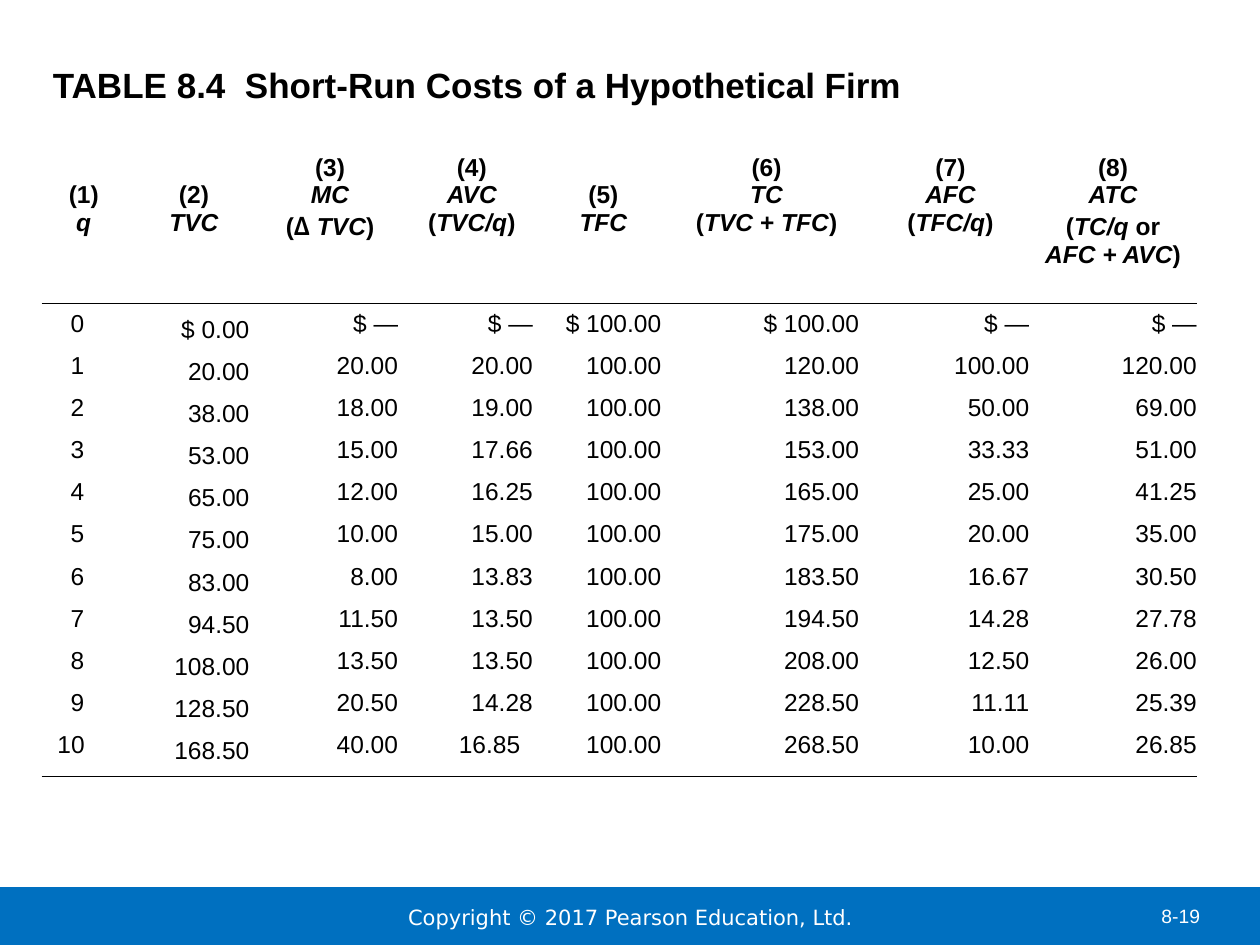
from lxml import etree
from pptx import Presentation, util as u
from pptx.dml.color import RGBColor
from pptx.enum import shapes, text
from pptx.oxml.ns import qn

BLACK = RGBColor(0, 0, 0)
WHITE = RGBColor(255, 255, 255)
BLUE = RGBColor(0x00, 0x70, 0xC0)
PLAIN_STYLE = "{2D5ABB26-0587-4C30-8999-92F81FD0307C}"

# Content: asterisks switch italics on and off within a line
TITLE = "TABLE 8.4  Short-Run Costs of a Hypothetical Firm"
COPYRIGHT = "Copyright © 2017 Pearson Education, Ltd."
PAGE = "8-19"
HEADERS = [
    "(1)\n*q*", "(2)\n*TVC*", "(3)\n*MC*\n(**Δ** *TVC*)",
    "(4)\n*AVC*\n(*TVC/q*)", "(5)\n*TFC*", "(6)\n*TC*\n(*TVC* + *TFC*)",
    "(7)\n*AFC*\n(*TFC/q*)", ["(8)\n*ATC*", "(*TC/q* or *AFC + AVC*)"],
]
ROWS = [
    ("0", "$ 0.00", "$ —", "$ —", "$ 100.00", "$ 100.00", "$ —", "$ —"),
    ("1", "20.00", "20.00", "20.00", "100.00", "120.00", "100.00", "120.00"),
    ("2", "38.00", "18.00", "19.00", "100.00", "138.00", "50.00", "69.00"),
    ("3", "53.00", "15.00", "17.66", "100.00", "153.00", "33.33", "51.00"),
    ("4", "65.00", "12.00", "16.25", "100.00", "165.00", "25.00", "41.25"),
    ("5", "75.00", "10.00", "15.00", "100.00", "175.00", "20.00", "35.00"),
    ("6", "83.00", "8.00", "13.83", "100.00", "183.50", "16.67", "30.50"),
    ("7", "94.50", "11.50", "13.50", "100.00", "194.50", "14.28", "27.78"),
    ("8", "108.00", "13.50", "13.50", "100.00", "208.00", "12.50", "26.00"),
    ("9", "128.50", "20.50", "14.28", "100.00", "228.50", "11.11", "25.39"),
    ("10", "168.50", "40.00", "16.85", "100.00", "268.50", "10.00", "26.85"),
]
COL_WIDTHS = [0.67, 1.08, 1.08, 1.17, 0.92, 1.67, 1.25, 1.33]
ROW_HEIGHTS = [1.24] + [0.32] * 5 + [0.34] + [0.32] * 4 + [0.41]
RIGHT_INSETS = [0.1, 0.1, 0, 0.1, 0, 0.1, 0, 0]


def write(tf, paragraphs, size=14, font="Arial", color=BLACK, bold=False,
          align=text.PP_ALIGN.LEFT, gap=2.8):
    if isinstance(paragraphs, str):
        paragraphs = [paragraphs]
    for i, paragraph in enumerate(paragraphs):
        p = tf.add_paragraph() if i else tf.paragraphs[0]
        p.alignment = align
        if i:
            p.space_before = u.Pt(gap)
        for j, line in enumerate(paragraph.split("\n")):
            if j:
                p.add_line_break()
                etree.SubElement(p._p[-1], qn("a:rPr"), sz=str(size * 100))
            for k, part in enumerate(line.split("*")):
                if not part:
                    continue
                r = p.add_run()
                r.text = part
                delta = part == "Δ"
                r.font.size = u.Pt(16 if delta else size)
                r.font.name = "Calibri" if delta else font
                r.font.color.rgb = color
                r.font.bold = bold
                r.font.italic = k % 2 == 1


def set_insets(box, left, top, right, bottom):
    box.margin_left, box.margin_top = u.Inches(left), u.Inches(top)
    box.margin_right, box.margin_bottom = u.Inches(right), u.Inches(bottom)


def add_box(s, *place):
    tf = s.shapes.add_textbox(*map(u.Inches, place)).text_frame
    tf.word_wrap = True
    return tf


def add_band(s, *place):
    sp = s.shapes.add_shape(shapes.MSO_SHAPE.RECTANGLE, *map(u.Inches, place))
    sp.shadow.inherit = False
    sp.fill.solid()
    sp.fill.fore_color.rgb = BLUE
    sp.line.fill.background()
    return sp.text_frame


def rule_below(cell):
    ln = etree.Element(qn("a:lnB"), w=str(u.Pt(1)))
    fill = etree.SubElement(ln, qn("a:solidFill"))
    etree.SubElement(fill, qn("a:srgbClr"), val=str(BLACK))
    cell._tc.get_or_add_tcPr().insert(0, ln)


def add_cost_table(s):
    frame = s.shapes.add_table(
        len(ROW_HEIGHTS), len(COL_WIDTHS), u.Inches(0.33), u.Inches(1.17),
        u.Inches(sum(COL_WIDTHS)), u.Inches(sum(ROW_HEIGHTS)))
    table = frame.table
    table.first_row = table.horz_banding = False
    table._tbl.tblPr.find(qn("a:tableStyleId")).text = PLAIN_STYLE
    for col, width in zip(table.columns, COL_WIDTHS):
        col.width = u.Inches(width)
    for row, height in zip(table.rows, ROW_HEIGHTS):
        row.height = u.Inches(height)

    last = len(ROWS)
    for i, values in enumerate([HEADERS] + ROWS):
        for j, value in enumerate(values):
            cell = table.cell(i, j)
            cell.fill.background()
            centred = i == 0 or j == 0
            if i == 0:
                # Two-line headings start one line lower
                short = isinstance(value, str) and value.count("\n") == 1
                set_insets(cell, 0.1, 0.27 if short else 0.05, 0.1, 0.05)
            else:
                right = 0.2 if i == last and j in (0, 3) else RIGHT_INSETS[j]
                top, bottom = (0.1, 0) if j == 1 else (0.05, 0.05)
                set_insets(cell, 0, top, right, bottom)
            write(cell.text_frame, value, bold=i == 0,
                  align=text.PP_ALIGN.CENTER if centred else text.PP_ALIGN.RIGHT)
            if i in (0, last):
                rule_below(cell)


def main():
    prs = Presentation()
    prs.slide_width, prs.slide_height = u.Inches(10), u.Inches(7.5)
    s = prs.slides.add_slide(prs.slide_layouts[6])

    # Footer
    add_band(s, 0, 7.04, 10, 0.46)
    write(add_box(s, 9.12, 7.13, 0.76, 0.29), PAGE, size=11, color=WHITE)
    tf = add_band(s, 1.55, 7.05, 6.91, 0.45)
    set_insets(tf, 0, 0, 0, 0)
    tf.vertical_anchor = text.MSO_ANCHOR.MIDDLE
    write(tf, COPYRIGHT, size=12, font="DejaVu Sans", color=WHITE,
          align=text.PP_ALIGN.CENTER)

    # Title
    tf = add_box(s, 0.42, 0.5, 9.17, 0.75)
    set_insets(tf, 0, 0, 0, 0)
    write(tf, TITLE, size=20, bold=True)

    # Cost table
    add_cost_table(s)
    prs.save("out.pptx")


if __name__ == "__main__":
    main()
